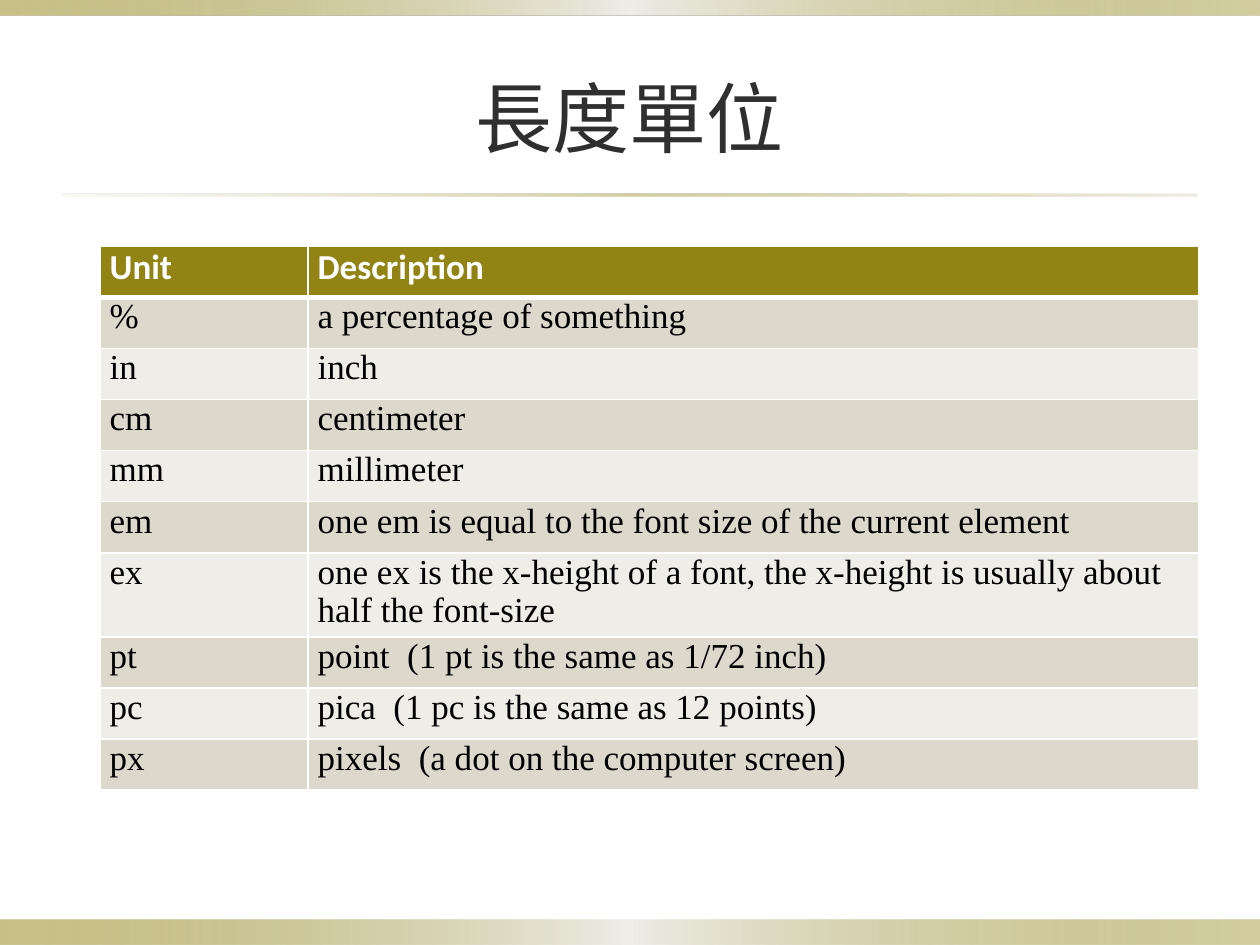
from dataclasses import dataclass

from lxml.etree import SubElement
from pptx import Presentation
from pptx.dml.color import RGBColor as Rgb
from pptx.enum.shapes import MSO_SHAPE as Shape
from pptx.enum.text import MSO_ANCHOR as Anchor, PP_ALIGN as Align
from pptx.oxml.ns import qn
from pptx.util import Pt


@dataclass(frozen=True)
class Theme:
    olive: str = "918415"
    band_dark: str = "DCD9CC"
    band_light: str = "EEEDE8"
    white: str = "FFFFFF"
    black: str = "000000"
    title: str = "2F2F2F"
    title_font: str = "Noto Sans CJK SC"
    header_font: str = "Calibri"
    body_font: str = "Times New Roman"
    title_size: int = 44
    table_size: int = 20


THEME = Theme()

# Gradient stops: position, colour and opacity in percent
BAR_STOPS = [(0, THEME.olive, 50), (50, THEME.band_light, 100), (100, THEME.olive, 40)]
RULE_STOPS = [(0, THEME.band_dark, 20), (50, THEME.olive, 40), (100, THEME.band_dark, 50)]

UNITS = [
    ("Unit", "Description"),
    ("%", "a percentage of something"),
    ("in", "inch"),
    ("cm", "centimeter"),
    ("mm", "millimeter"),
    ("em", "one em is equal to the font size of the current element"),
    ("ex", "one ex is the x-height of a font, the x-height is usually about half the font-size"),
    ("pt", "point  (1 pt is the same as 1/72 inch)"),
    ("pc", "pica  (1 pc is the same as 12 points)"),
    ("px", "pixels  (a dot on the computer screen)"),
]
COLUMN_WIDTHS = (118.8, 509)
ROW_HEIGHT, TALL_ROW_HEIGHT = 29.2, 48


def set_font(paragraph, name, size, color, bold=False):
    font = paragraph.font
    font.name, font.size, font.bold = name, Pt(size), bold
    font.color.rgb = Rgb.from_string(color)


def add_gradient_bar(page, left, top, width, height, stops):
    bar = page.shapes.add_shape(Shape.RECTANGLE, Pt(left), Pt(top), Pt(width), Pt(height))
    bar.shadow.inherit = False
    bar.line.fill.background()
    bar.fill.gradient()
    bar.fill.gradient_angle = 0
    stop_list = bar.element.spPr.find(qn("a:gradFill")).find(qn("a:gsLst"))
    for stop in list(stop_list):
        stop_list.remove(stop)
    for position, color, opacity in stops:
        stop = SubElement(stop_list, qn("a:gs"), pos=str(position * 1000))
        tint = SubElement(stop, qn("a:srgbClr"), val=color)
        SubElement(tint, qn("a:alpha"), val=str(opacity * 1000))


def fill_title(page, text):
    title = page.shapes.title
    title.left, title.top, title.width, title.height = Pt(36), Pt(21.6), Pt(648), Pt(90)
    frame = title.text_frame
    frame.vertical_anchor = Anchor.MIDDLE
    frame.text = text
    para = frame.paragraphs[0]
    para.alignment = Align.CENTER
    set_font(para, THEME.title_font, THEME.title_size, THEME.title)
    # East Asian text takes its own typeface
    span = para.runs[0].font
    span.name = THEME.title_font
    SubElement(para.runs[0]._r.get_or_add_rPr(), qn("a:ea"), typeface=THEME.title_font)


def add_borders(cell, top, bottom):
    properties = cell._tc.get_or_add_tcPr()
    for side, width in (("L", 1), ("R", 1), ("T", top), ("B", bottom)):
        line = SubElement(properties, qn(f"a:ln{side}"), w=str(Pt(width)))
        paint = SubElement(line, qn("a:solidFill"))
        SubElement(paint, qn("a:srgbClr"), val=THEME.white)


def format_cell(cell, text, row):
    is_header = row == 0
    cell.margin_left = cell.margin_right = Pt(5.5)
    cell.margin_top = cell.margin_bottom = 0
    cell.text = text
    para = cell.text_frame.paragraphs[0]
    if is_header:
        color = THEME.olive
        set_font(para, THEME.header_font, THEME.table_size, THEME.white, bold=True)
    else:
        color = THEME.band_dark if row % 2 else THEME.band_light
        set_font(para, THEME.body_font, THEME.table_size, THEME.black)
    add_borders(cell, top=3 if row == 1 else 1, bottom=3 if is_header else 1)
    cell.fill.solid()
    cell.fill.fore_color.rgb = Rgb.from_string(color)


def add_unit_table(page, left, top):
    heights = [TALL_ROW_HEIGHT if unit == "ex" else ROW_HEIGHT for unit, _ in UNITS]
    table = page.shapes.add_table(
        len(UNITS), len(COLUMN_WIDTHS), Pt(left), Pt(top),
        Pt(sum(COLUMN_WIDTHS)), Pt(sum(heights)),
    ).table
    for column, width in zip(table.columns, COLUMN_WIDTHS):
        column.width = Pt(width)
    for row, (texts, height) in enumerate(zip(UNITS, heights)):
        table.rows[row].height = Pt(height)
        for column, text in enumerate(texts):
            format_cell(table.cell(row, column), text, row)


def main():
    deck = Presentation()
    deck.slide_width, deck.slide_height = Pt(720), Pt(540)
    page = deck.slides.add_slide(deck.slide_layouts[5])

    # Edge bars and the rule below the title
    add_gradient_bar(page, 0, 525.6, 720, 14.4, BAR_STOPS)
    add_gradient_bar(page, 0, 0, 720, 8.64, BAR_STOPS)
    add_gradient_bar(page, 36, 110.9, 648, 1.44, RULE_STOPS)

    # Title and table of units
    fill_title(page, "長度單位")
    add_unit_table(page, 57.2, 140.7)

    deck.save("out.pptx")


if __name__ == "__main__":
    main()
